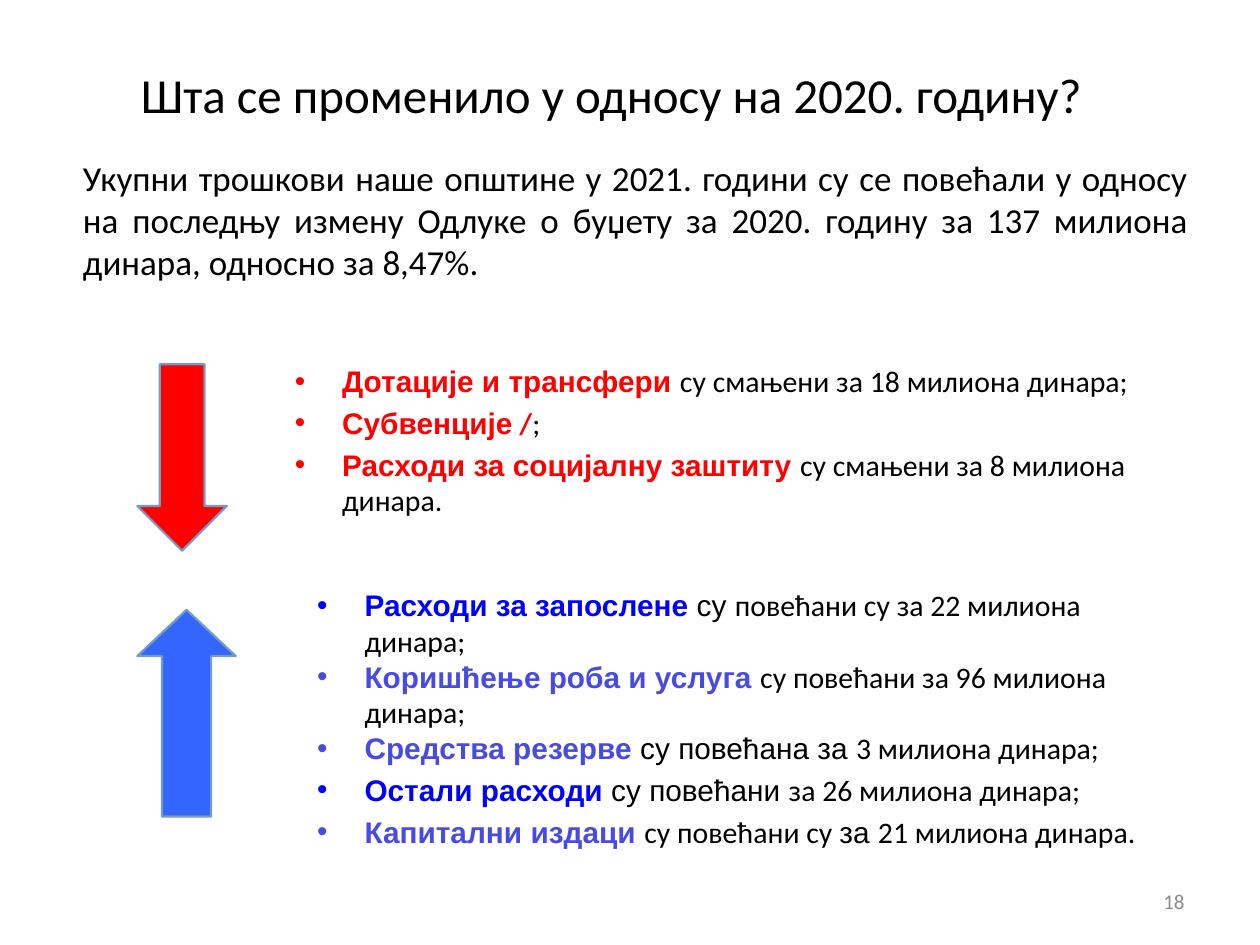
from lxml import etree
from pptx import Presentation
from pptx.dml.color import RGBColor
from pptx.enum.shapes import MSO_SHAPE as Geo
from pptx.enum.text import MSO_ANCHOR as Anchor, MSO_AUTO_SIZE as Fit, PP_ALIGN as Align
from pptx.oxml.ns import qn
from pptx.util import Pt

BLACK, RED, BLUE, VIOLET = "000000", "FF0000", "0000FF", "474BE1"
SANS, BODY = "Arial", "Calibri"

CUTS = [
    [("Дотације и трансфери ", SANS, RED), ("су смањени за 18 милиона динара;", BODY, BLACK)],
    [("Субвенције", SANS, RED), (" /", BODY, RED), (";", BODY, BLACK)],
    [("Расходи за социјалну заштиту ", SANS, RED),
     ("су смањени за 8 милиона динара.", BODY, BLACK)],
]
RISES = [
    [("Расходи за запослене ", SANS, BLUE), ("су ", SANS, BLACK),
     ("повећани су за 22 милиона динара;", BODY, BLACK)],
    [("Коришћење роба и услуга ", SANS, VIOLET),
     ("су повећани за 96 милиона динара;", BODY, BLACK)],
    [("Средства резерве ", SANS, VIOLET), ("су повећана за ", SANS, BLACK),
     ("3 милиона динара;", BODY, BLACK)],
    [("Остали расходи ", SANS, BLUE), ("су повећани ", SANS, BLACK),
     ("за 26 милиона динара;", BODY, BLACK)],
    [("Капитални издаци ", SANS, VIOLET), ("су повећани су ", BODY, BLACK),
     ("за ", SANS, BLACK), ("21 милиона динара.", BODY, BLACK)],
]


def color(code):
    return RGBColor.from_string(code)


def style(run, size, face, code, bold=False):
    font = run.font
    font.size, font.name, font.bold = Pt(size), face, bold
    font.color.rgb = color(code)


def place(shape, box):
    shape.left, shape.top, shape.width, shape.height = [Pt(v) for v in box]


def frame(shape, anchor=Anchor.TOP):
    text = shape.text_frame
    text.word_wrap, text.auto_size = True, Fit.NONE
    text.vertical_anchor = anchor
    return text


def indent(par, left, first, mark=None):
    """Set the indents and the bullet mark; no mark means no bullet."""
    props = par._p.get_or_add_pPr()
    props.set("marL", str(Pt(left)))
    props.set("indent", str(Pt(first)))
    if mark:
        etree.SubElement(props, qn("a:buFont")).set("typeface", SANS)
        etree.SubElement(props, qn("a:buChar")).set("char", mark)
    else:
        etree.SubElement(props, qn("a:buNone"))


def line(shape, box, text, size, align, code=BLACK, anchor=Anchor.MIDDLE):
    """Fill a shape with one paragraph in one style."""
    place(shape, box)
    par = frame(shape, anchor).paragraphs[0]
    par.text, par.alignment = text, align
    style(par.runs[0], size, BODY, code)
    return par


def intro(shape, box, text):
    par = line(shape, box, text, 20, Align.JUSTIFY, anchor=Anchor.TOP)
    par.space_before = Pt(4)
    indent(par, 2, 0)


def bullets(shape, box, items, tight=0):
    """List the items; the first `tight` of them get no gap above."""
    place(shape, box)
    text = frame(shape)
    for i, parts in enumerate(items):
        par = text.add_paragraph() if i else text.paragraphs[0]
        par.alignment = Align.LEFT
        par.space_before = Pt(0 if i < tight else 3.4)
        indent(par, 27, -27, "•")
        for words, face, code in parts:
            run = par.add_run()
            run.text = words
            style(run, 17, face, code, code != BLACK)


def arrow(slide, box, kind, fill, head):
    shape = slide.shapes.add_shape(kind, *[Pt(v) for v in box])
    shape.shadow.inherit = False
    shape.adjustments[0], shape.adjustments[1] = 0.5, head
    shape.fill.solid()
    shape.fill.fore_color.rgb = color(fill)
    shape.line.color.rgb = color("739CC3")
    shape.line.width = Pt(1.25)


def main():
    deck = Presentation()
    deck.slide_width, deck.slide_height = Pt(720), Pt(540)
    slide = deck.slides.add_slide(deck.slide_layouts.get_by_name("Two Content"))
    title, lead, cuts = slide.placeholders
    line(title, (25.2, 20.9, 648, 65.5), "Шта се променило у односу на 2020. годину?",
         28, Align.CENTER)
    intro(lead, (38.2, 85.7, 648, 89.3),
          "Укупни трошкови наше општине у 2021. години су се повећали у односу на "
          "последњу измену Одлуке о буџету за 2020. годину за 137 милиона динара, "
          "односно за 8,47%.")
    bullets(cuts, (161.3, 203.8, 539.3, 115.9), CUTS)
    rises = slide.shapes.add_textbox(0, 0, 0, 0)
    bullets(rises, (174.2, 331.9, 483.8, 157.7), RISES, tight=3)
    arrow(slide, (78.5, 208.1, 51.1, 106.6), Geo.DOWN_ARROW, RED, 0.5)
    number = slide.shapes.add_textbox(0, 0, 0, 0)
    line(number, (516.2, 500.4, 167.8, 28.8), "18", 12, Align.RIGHT, "8C8C8C")
    arrow(slide, (78.5, 348.5, 56.2, 118.1), Geo.UP_ARROW, "3366FF", 0.47)
    deck.save("out.pptx")


if __name__ == "__main__":
    main()
